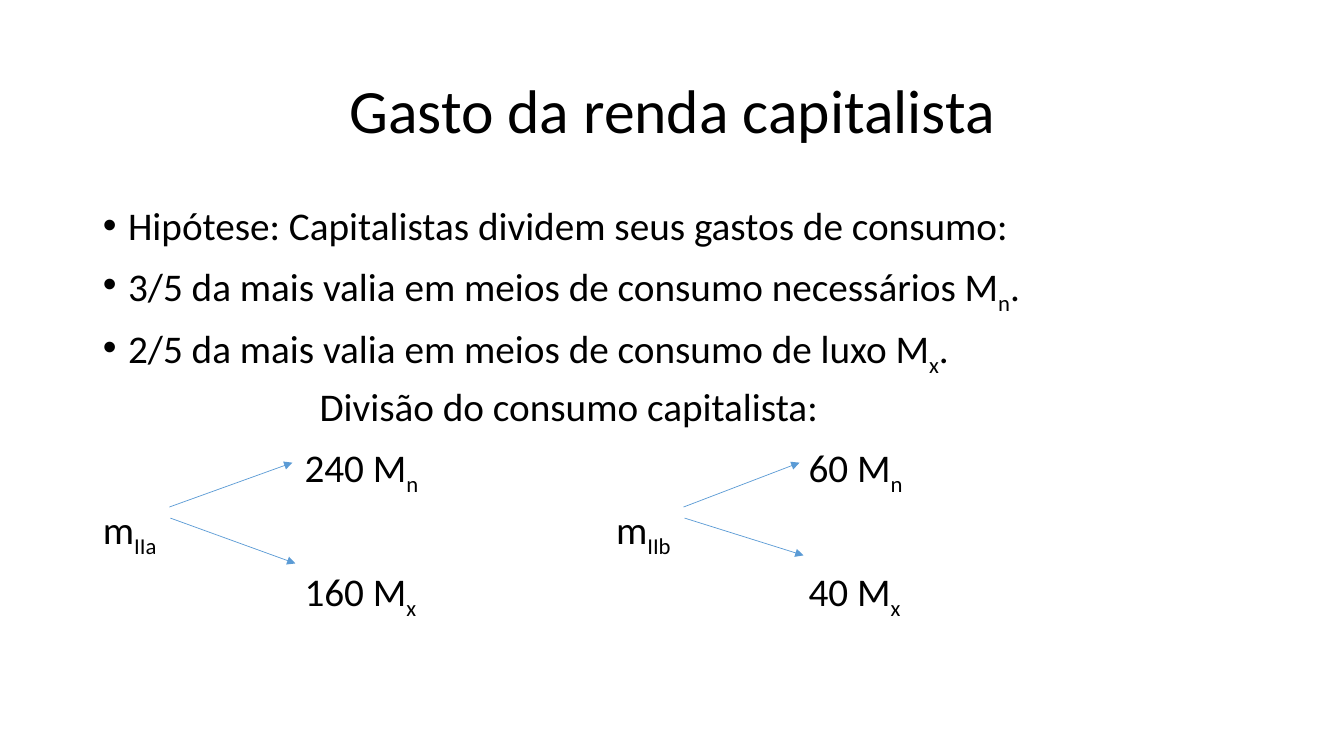
from lxml.etree import SubElement
from pptx import Presentation
from pptx.dml.color import RGBColor
from pptx.enum.shapes import MSO_CONNECTOR
from pptx.enum.text import MSO_ANCHOR, MSO_AUTO_SIZE, PP_ALIGN
from pptx.oxml.ns import qn
from pptx.util import Inches, Pt

COLORS = {"text": "000000", "arrow": "5B9BD5", "background": "FFFFFF"}
BULLETS = [
    [("Hipótese: Capitalistas dividem seus gastos de consumo:", False)],
    [("3/5 da mais valia em meios de consumo necessários M", False), ("n", True), (".", False)],
    [("2/5 da mais valia em meios de consumo de luxo M", False), ("x", True), (".", False)],
]
DIVISION_HEADING = [("Divisão do consumo capitalista:", False)]
DIVISION_ROWS = [
    ([("\t\t240 M", False), ("n", True), ("\t\t\t\t60 M", False), ("n", True)], 1),
    ([("m", False), ("IIa", True), ("\tm", False), ("IIb", True)], 5.09),
    ([("\t\t160 M", False), ("x", True), ("\t\t\t\t40 M", False), ("x", True)], 1),
]
ARROWS = [
    ((1.68, 5.03), (2.9, 4.59)),
    ((1.69, 5.14), (2.93, 5.59)),
    ((6.78, 5.03), (7.93, 4.59)),
    ((6.79, 5.14), (7.97, 5.51)),
]


class SlideBuilder:
    """Holds the text style and the page being built."""

    def __init__(self, page, font_name="Calibri"):
        """Keep the page and give it a plain background."""
        self.page = page
        self.font_name = font_name
        fill = page.background.fill
        fill.solid()
        fill.fore_color.rgb = RGBColor.from_string(COLORS["background"])

    def place(self, box, left, top, width, height, anchor):
        """Move a placeholder and return its text frame."""
        box.left, box.top = Inches(left), Inches(top)
        box.width, box.height = Inches(width), Inches(height)
        frame = box.text_frame
        frame.word_wrap = True
        frame.auto_size = MSO_AUTO_SIZE.NONE
        frame.vertical_anchor = anchor
        return frame

    def style(self, para, size, align):
        """Apply the shared font and line spacing to a paragraph."""
        para.alignment = align
        para.line_spacing = 0.9
        para.font.name = self.font_name
        para.font.size = Pt(size)
        para.font.color.rgb = RGBColor.from_string(COLORS["text"])

    def title(self, text):
        """Write the centred title."""
        frame = self.place(self.page.shapes.title, 0.92, 0.4, 11.5, 1.45, MSO_ANCHOR.MIDDLE)
        frame.text = text
        self.style(frame.paragraphs[0], 44, PP_ALIGN.CENTER)

    def body(self):
        """Return the text frame of the body placeholder."""
        return self.place(self.page.placeholders[1], 0.92, 2, 11.5, 4.76, MSO_ANCHOR.TOP)

    def line(self, frame, spans, bullet=False, left=0.0, tab_width=1):
        """Add a line of normal and subscript spans with evenly spaced tabs."""
        first = not frame.paragraphs[0].runs
        para = frame.paragraphs[0] if first else frame.add_paragraph()
        properties = para._p.get_or_add_pPr()
        properties.set("marL", str(Inches(0.25 if bullet else left)))
        properties.set("indent", str(Inches(-0.25 if bullet else 0)))
        properties.set("defTabSz", str(Inches(tab_width)))
        if bullet:
            SubElement(properties, qn("a:buFont"), typeface="Arial")
            SubElement(properties, qn("a:buChar"), char="•")
        else:
            SubElement(properties, qn("a:buNone"))
        para.space_before = Pt(0 if first else 10)
        self.style(para, 28, PP_ALIGN.LEFT)
        for text, subscript in spans:
            span = para.add_run()
            span.text = text
            if subscript:
                span._r.get_or_add_rPr().set("baseline", "-25000")

    def arrow(self, start, end):
        """Draw a thin arrow between two points."""
        points = [Inches(value) for value in (*start, *end)]
        connector = self.page.shapes.add_connector(MSO_CONNECTOR.STRAIGHT, *points)
        connector.line.color.rgb = RGBColor.from_string(COLORS["arrow"])
        connector.line.width = Pt(0.5)
        SubElement(connector.line._get_or_add_ln(), qn("a:tailEnd"), type="triangle")
        SubElement(connector._element.spPr, qn("a:effectLst"))


def main():
    """Build and save the slide."""
    deck = Presentation()
    deck.slide_width, deck.slide_height = Inches(13.33), Inches(7.5)
    builder = SlideBuilder(deck.slides.add_slide(deck.slide_layouts[1]))
    builder.title("Gasto da renda capitalista")
    frame = builder.body()
    for spans in BULLETS:
        builder.line(frame, spans, bullet=True)
    builder.line(frame, DIVISION_HEADING, left=2.15)
    for spans, tab_width in DIVISION_ROWS:
        builder.line(frame, spans, tab_width=tab_width)
    for start, end in ARROWS:
        builder.arrow(start, end)
    deck.save("out.pptx")


if __name__ == "__main__":
    main()
